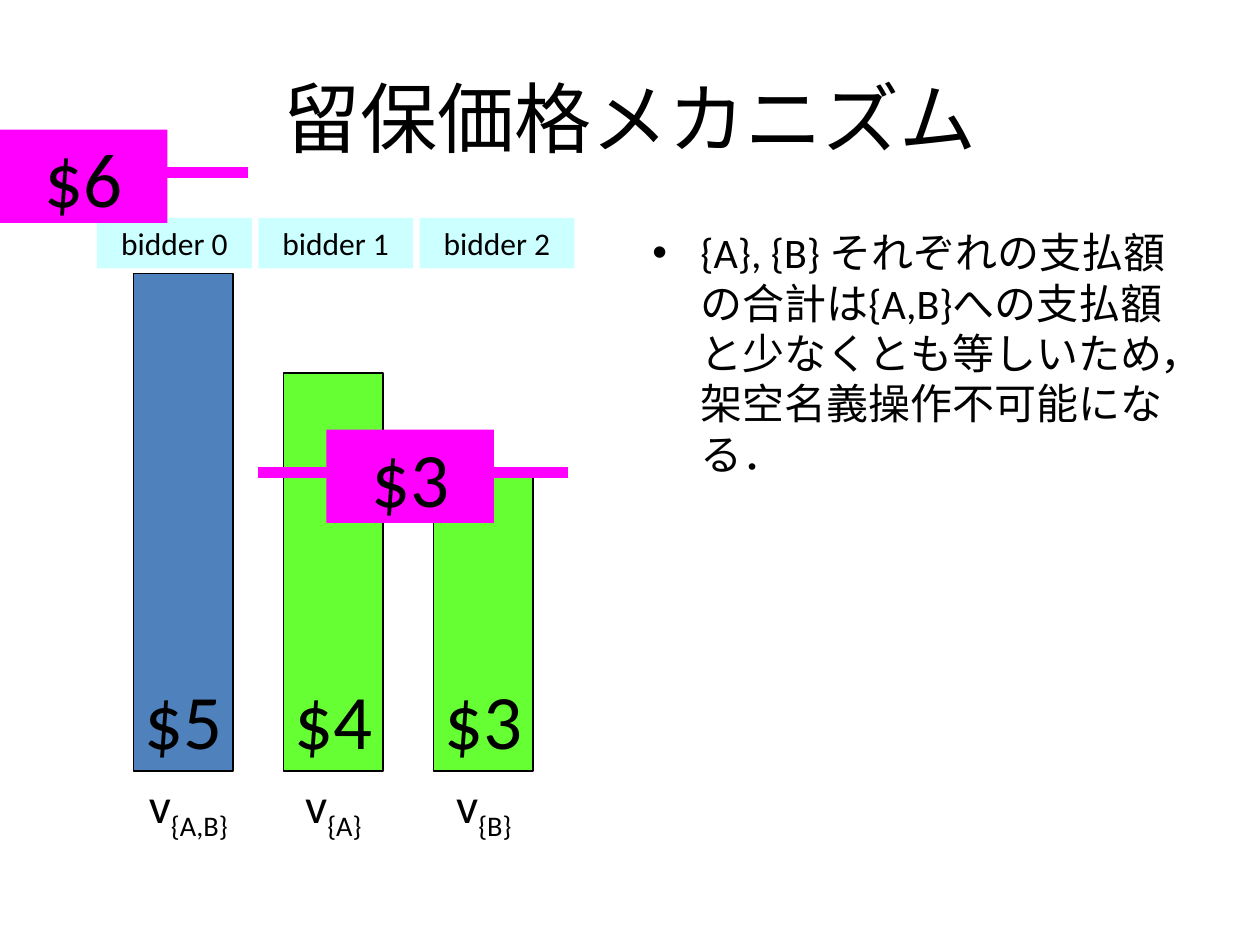
from dataclasses import dataclass
from lxml.etree import SubElement
from pptx import Presentation
from pptx.dml.color import RGBColor as RGB
from pptx.enum.shapes import MSO_CONNECTOR as Conn, MSO_SHAPE as Shape
from pptx.enum.text import MSO_ANCHOR as Anchor, PP_ALIGN as Align
from pptx.oxml.ns import qn
from pptx.util import Inches, Pt


@dataclass(frozen=True)
class Theme:
    font: str = "Calibri"
    ink: RGB = RGB(0x00, 0x00, 0x00)
    blue: RGB = RGB(0x4F, 0x81, 0xBD)
    green: RGB = RGB(0x66, 0xFF, 0x33)
    pale: RGB = RGB(0xCC, 0xFF, 0xFF)
    pink: RGB = RGB(0xFF, 0x00, 0xFF)
    big: int = 44
    value: int = 28
    body: int = 24
    small: int = 18


theme = Theme()


def write(para, text, size):
    run = para.add_run()
    run.text = text
    run.font.name = theme.font
    run.font.size = Pt(size)
    run.font.color.rgb = theme.ink
    return run


def add_box(place, fill, text, size, anchor=Anchor.MIDDLE):
    """Add a filled, unlined rectangle with centred text."""
    box = slide.shapes.add_shape(Shape.RECTANGLE, *map(Inches, place))
    box.shadow.inherit = False
    box.fill.solid()
    box.fill.fore_color.rgb = fill
    box.line.fill.background()
    frame = box.text_frame
    frame.word_wrap = False
    frame.vertical_anchor = anchor
    para = frame.paragraphs[0]
    para.alignment = Align.CENTER
    write(para, text, size)
    return box


prs = Presentation()
prs.slide_width, prs.slide_height = Inches(10), Inches(7.5)
slide = prs.slides.add_slide(prs.slide_layouts[5])

# Title
title = slide.shapes.title
title.left, title.top = Inches(0.5), Inches(0.3)
title.width, title.height = Inches(9), Inches(1.25)
title.text_frame.vertical_anchor = Anchor.MIDDLE
para = title.text_frame.paragraphs[0]
para.alignment = Align.CENTER
write(para, "留保価格メカニズム", theme.big)

# Bulleted remark
note = slide.shapes.add_textbox(Inches(5.08), Inches(1.75), Inches(4.42), Inches(4.95))
note.text_frame.word_wrap = True
para = note.text_frame.paragraphs[0]
para.space_before = Pt(theme.body * 0.2)
props = para._p.get_or_add_pPr()
props.set("marL", str(Inches(0.38)))
props.set("indent", str(-Inches(0.38)))
SubElement(props, qn("a:buFont"), typeface="Arial")
SubElement(props, qn("a:buChar"), char="•")
write(para, "{A}, {B} それぞれの支払額の合計は{A,B}への支払額と少なくとも等しいため，"
      "架空名義操作不可能になる．", theme.body)

# Value labels under the bars: left, width, subscript
for left, width, sub in [(0.93, 1.13, "{A,B}"), (2.19, 0.91, "{A}"), (3.37, 0.94, "{B}")]:
    label = slide.shapes.add_textbox(Inches(left), Inches(6.13), Inches(width), Inches(0.57))
    label.text_frame.word_wrap = False
    label.text_frame.vertical_anchor = Anchor.MIDDLE
    para = label.text_frame.paragraphs[0]
    para.alignment = Align.CENTER
    write(para, "v", theme.value)
    low = write(para, sub, theme.value)
    low.font._element.set("baseline", "-25000")

# Bids as bars, whose height follows the bid
base, unit = 6.12, 0.79
for i, (bid, fill) in enumerate([(5, theme.blue), (4, theme.green), (3, theme.green)]):
    high = bid * unit
    bar = add_box((1.06 + 1.19 * i, base - high, 0.79, high), fill,
                  f"${bid}", theme.big, Anchor.BOTTOM)
    bar.line.color.rgb = theme.ink
    bar.line.width = Pt(0.75)

for i in range(3):
    add_box((0.77 + 1.28 * i, 1.73, 1.23, 0.4), theme.pale, f"bidder {i}", theme.small)

# Reserve prices: line start, line end, line height, tag left, tag text
for start, end, y, left, text in [(2.05, 4.51, 3.75, 2.59, "$3"), (0.79, 1.97, 1.37, 0, "$6")]:
    line = slide.shapes.add_connector(Conn.STRAIGHT, Inches(start), Inches(y),
                                      Inches(end), Inches(y))
    line.line.color.rgb = theme.pink
    line.line.width = Pt(6)
    SubElement(line._element.spPr, qn("a:effectLst"))
    add_box((left, y - 0.34, 1.33, 0.74), theme.pink, text, theme.big)

prs.save("out.pptx")
